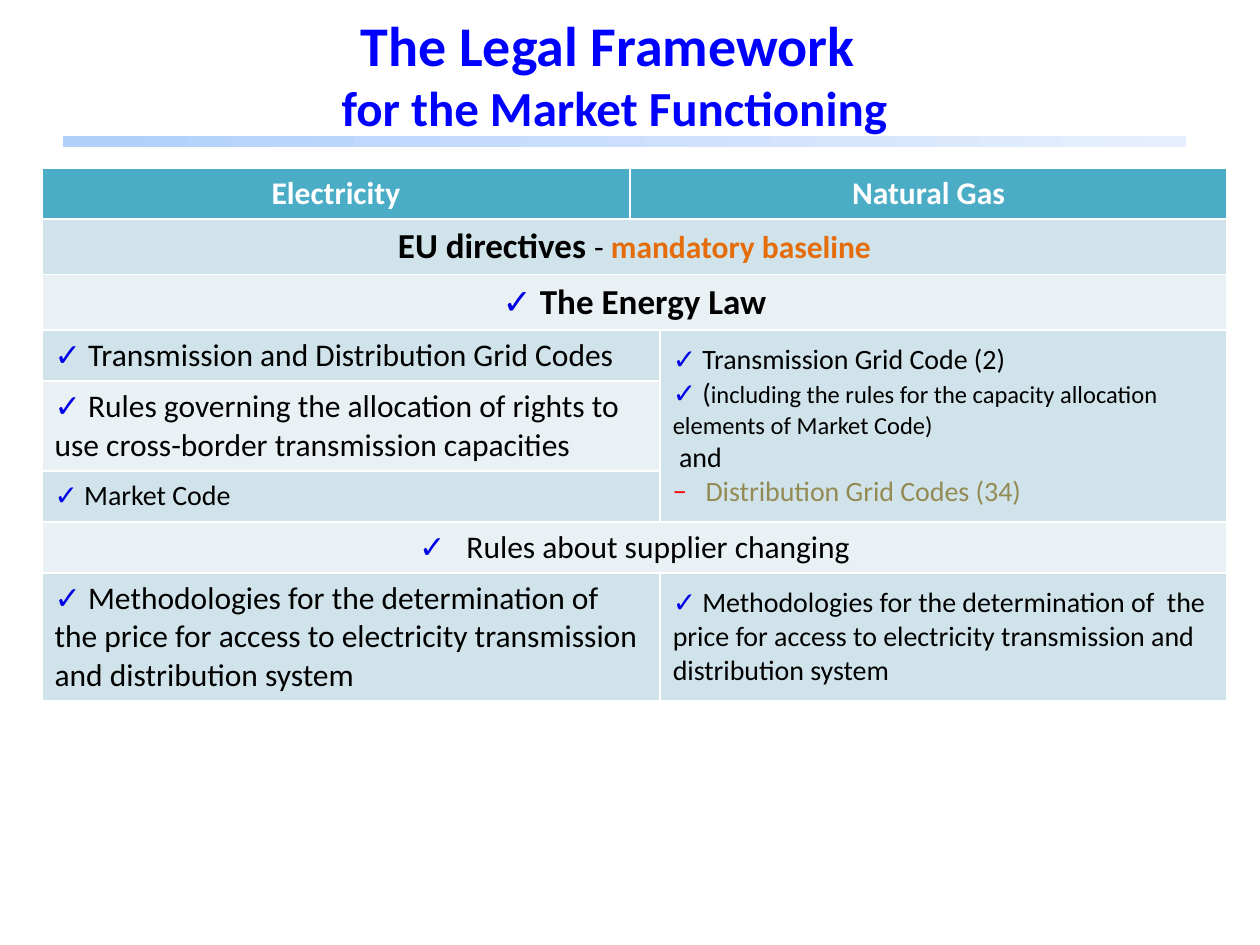
"""Build the slide on the legal framework for the energy markets."""
from dataclasses import dataclass

from lxml import etree
from pptx import Presentation
from pptx.dml.color import RGBColor
from pptx.enum.shapes import MSO_SHAPE
from pptx.enum.text import MSO_ANCHOR, MSO_AUTO_SIZE, PP_ALIGN
from pptx.oxml.ns import qn
from pptx.util import Pt

RECTANGLE = MSO_SHAPE.RECTANGLE
TOP, MIDDLE = MSO_ANCHOR.TOP, MSO_ANCHOR.MIDDLE
LEFT, CENTER = PP_ALIGN.LEFT, PP_ALIGN.CENTER
NO_FIT = MSO_AUTO_SIZE.NONE


@dataclass(frozen=True)
class Theme:
    """Colours, font and type sizes of the slide."""
    font: str = "Calibri"
    title: str = "0000FF"
    bar: tuple = ("B0CFFB", "E6EFFD")
    header: str = "4BACC6"
    bands: tuple = ("D0E3EA", "E9F1F5")
    white: str = "FFFFFF"
    text: str = "000000"
    accent: str = "E46C0A"
    muted: str = "948A54"
    check: str = "0000E6"
    dash: str = "FF0000"
    title_size: int = 32
    subtitle_size: int = 28
    heading: int = 20
    body: int = 18
    small: int = 16
    note: int = 14


@dataclass(frozen=True)
class Run:
    """A piece of text in one format."""
    text: str
    size: int
    color: str = Theme.text
    bold: bool = False


@dataclass(frozen=True)
class Para:
    """A paragraph of runs, with an optional bullet and hanging indent."""
    runs: tuple
    bullet: str = ""
    align: int = LEFT
    hang: float = 0


T = Theme()
CHECK, DASH = "✓", "−"
BULLET_COLORS = {CHECK: T.check, DASH: T.dash}
COLUMNS = (336, 12, 324)
ROWS = (17,) + (29.2,) * 7


def rgb(color):
    """Return a colour from its hex text."""
    return RGBColor.from_string(color)


def format_run(r, size, color, bold):
    """Set the font of a run."""
    r.font.name, r.font.size, r.font.bold = T.font, Pt(size), bold
    r.font.color.rgb = rgb(color)


def add_bullet(p, char, hang):
    """Give a paragraph a coloured bullet."""
    pPr = p._p.get_or_add_pPr()
    pPr.set("marL", str(Pt(hang)))
    pPr.set("indent", str(-Pt(hang)))
    clr = etree.SubElement(pPr, qn("a:buClr"))
    etree.SubElement(clr, qn("a:srgbClr"), val=BULLET_COLORS[char])
    etree.SubElement(pPr, qn("a:buFont"), typeface=T.font)
    etree.SubElement(pPr, qn("a:buChar"), char=char)


def add_title(s, first, second):
    """Fill the title placeholder with two lines of different size."""
    sp = s.shapes.title
    sp.left, sp.top, sp.width, sp.height = Pt(0), Pt(12), Pt(702), Pt(60)
    tf = sp.text_frame
    tf.auto_size, tf.vertical_anchor = NO_FIT, MIDDLE
    p = tf.paragraphs[0]
    p.text, p.alignment = f"{first}\v{second}", CENTER
    for r, size in zip(p.runs, (T.title_size, T.subtitle_size)):
        format_run(r, size, T.title, True)
    for br in p._p.findall(qn("a:br")):
        etree.SubElement(br, qn("a:rPr"), sz=str(T.title_size * 100))


def add_bar(s):
    """Draw the fading bar below the title."""
    sp = s.shapes.add_shape(RECTANGLE, Pt(36), Pt(78), Pt(642), Pt(6))
    sp.shadow.inherit = False
    sp.line.fill.background()
    sp.fill.gradient()
    sp.fill.gradient_angle = 0
    for stop, color in zip(sp.fill.gradient_stops, T.bar):
        stop.color.rgb = rgb(color)


def fill_cell(cell, paras, fill, anchor):
    """Write paragraphs into a table cell and colour it."""
    cell.fill.solid()
    cell.fill.fore_color.rgb = rgb(fill)
    cell.vertical_anchor = anchor
    tf = cell.text_frame
    for i, para in enumerate(paras):
        p = tf.add_paragraph() if i else tf.paragraphs[0]
        p.alignment = para.align
        if para.bullet:
            add_bullet(p, para.bullet, para.hang)
        for run in para.runs:
            r = p.add_run()
            r.text = run.text
            format_run(r, run.size, run.color, run.bold)


def checked(text, size):
    """Return a single check-marked paragraph."""
    return (Para((Run(text, size),), CHECK),)


def header(text):
    """Return a column heading."""
    return (Para((Run(text, T.body, T.white, True),), align=CENTER),)


def table_cells():
    """Return row, column, row span, column span and paragraphs of each cell."""
    method = (" Methodologies for the determination of  the price for access"
              " to electricity transmission and distribution system")
    directives = (Run("EU directives ", T.heading, bold=True), Run("- ", T.body),
                  Run("mandatory baseline", T.body, T.accent, True))
    law = (Run(" The Energy Law", T.heading, bold=True),)
    supplier = (Run("Rules about supplier changing", T.body),)
    gas_codes = (
        Para((Run(" Transmission Grid Code (2)", T.small),), CHECK),
        Para((Run(" (", T.small),
              Run("including the rules for the capacity allocation elements"
                  " of Market Code)", T.note)), CHECK),
        Para((Run(" and", T.small),)),
        Para((Run("   ", T.small),
              Run("Distribution Grid Codes (34)", T.small, T.muted)), DASH),
    )
    return (
        (0, 0, 1, 1, header("Electricity")),
        (0, 1, 1, 2, header("Natural Gas")),
        (1, 0, 1, 3, (Para(directives, align=CENTER),)),
        (2, 0, 1, 3, (Para(law, CHECK, CENTER),)),
        (3, 0, 1, 2, checked(" Transmission and Distribution Grid Codes", T.body)),
        (3, 2, 3, 1, gas_codes),
        (4, 0, 1, 2, checked(" Rules governing the allocation of rights to use"
                             " cross-border transmission capacities", T.body)),
        (5, 0, 1, 2, checked(" Market Code", T.small)),
        (6, 0, 1, 3, (Para(supplier, CHECK, CENTER, 27),)),
        (7, 0, 1, 2, checked(method, T.body)),
        (7, 2, 1, 1, checked(method, T.small)),
    )


def add_framework_table(s):
    """Add the table comparing electricity and natural gas."""
    table = s.shapes.add_table(len(ROWS), len(COLUMNS), Pt(24), Pt(96),
                               Pt(sum(COLUMNS)), Pt(sum(ROWS))).table
    for col, width in zip(table.columns, COLUMNS):
        col.width = Pt(width)
    for row, height in zip(table.rows, ROWS):
        row.height = Pt(height)
    for row, col, down, across, paras in table_cells():
        cell = table.cell(row, col)
        if down * across > 1:
            cell.merge(table.cell(row + down - 1, col + across - 1))
        fill = T.bands[(row - 1) % 2] if row else T.header
        fill_cell(cell, paras, fill, MIDDLE if row > 2 else TOP)


def main():
    """Build and save the slide."""
    prs = Presentation()
    prs.slide_width, prs.slide_height = Pt(720), Pt(540)
    s = prs.slides.add_slide(prs.slide_layouts[5])
    add_title(s, "The Legal Framework ", "for the Market Functioning")
    add_bar(s)
    add_framework_table(s)
    prs.save("out.pptx")


if __name__ == "__main__":
    main()
